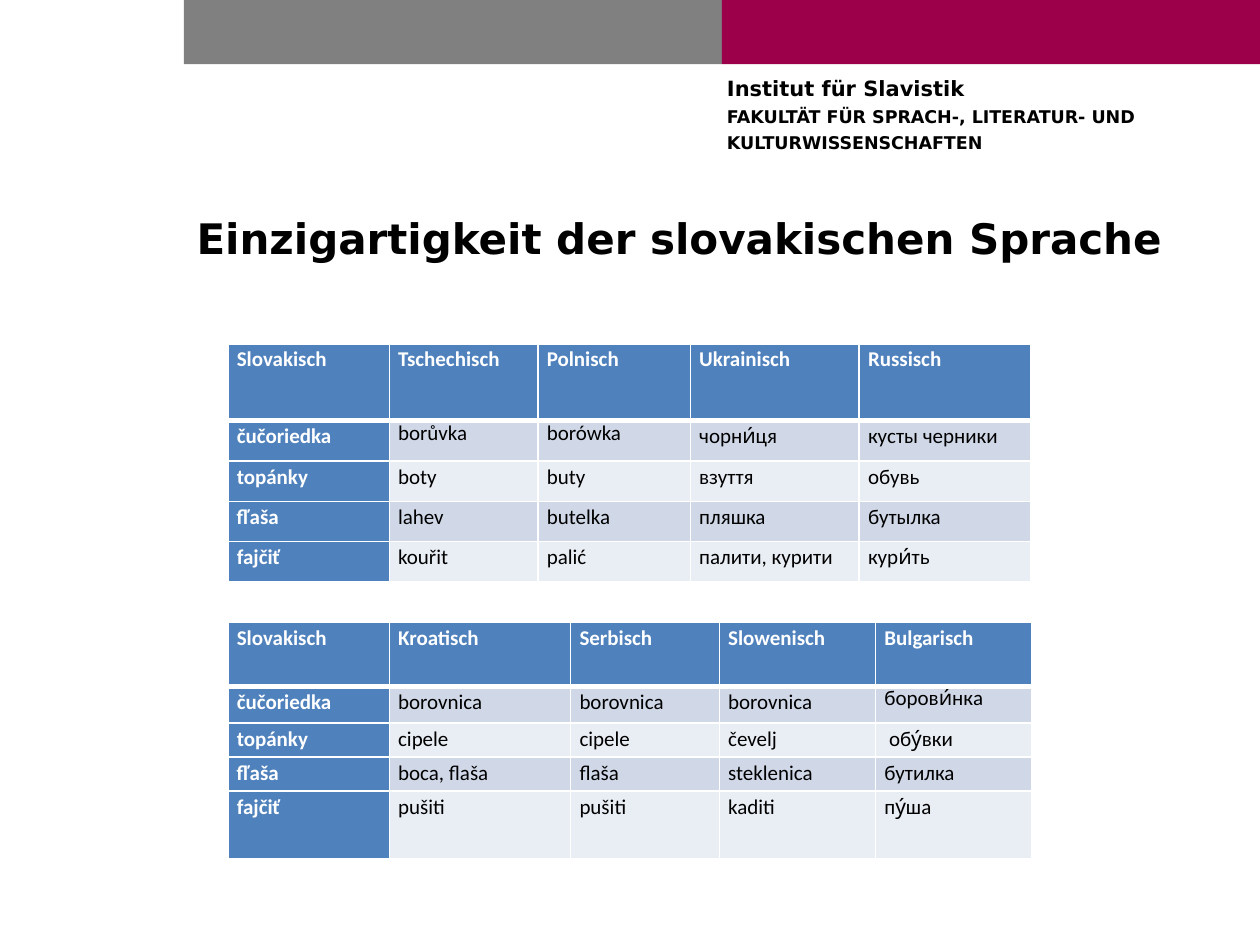
from dataclasses import dataclass

from lxml.etree import SubElement
from pptx import Presentation
from pptx.dml.color import RGBColor
from pptx.enum.shapes import MSO_SHAPE
from pptx.enum.text import MSO_ANCHOR, MSO_AUTO_SIZE, PP_ALIGN
from pptx.oxml.ns import qn
from pptx.slide import Slide
from pptx.util import Inches, Pt


@dataclass(frozen=True)
class Theme:
    grey: str = "808080"
    wine: str = "9C004B"
    blue: str = "4F81BD"
    dark: str = "D0D8E8"
    light: str = "E9EDF4"
    white: str = "FFFFFF"
    black: str = "000000"
    head: str = "DejaVu Sans"
    body: str = "Calibri"
    title: float = 24
    text: float = 12
    small: float = 10


@dataclass(frozen=True)
class Band:
    left: float
    color: str


@dataclass(frozen=True)
class Grid:
    top: float
    cols: list[float]
    rows: list[float]
    words: list[list[str]]
    tight: set[tuple[int, int]]  # row and column of cells with fixed line height


THEME = Theme()
LEFT = 1.81
BANDS = [Band(1.46, THEME.grey), Band(5.73, THEME.wine)]
LINES = [
    ("Institut für Slavistik", THEME.text),
    ("FAKULTÄT FÜR SPRACH-, LITERATUR- UND", THEME.small),
    ("KULTURWISSENSCHAFTEN", THEME.small),
]
GRIDS = [
    Grid(
        2.73, [1.28, 1.18, 1.21, 1.34, 1.36], [0.61, 0.32, 0.32, 0.32, 0.32],
        [
            ["Slovakisch", "Tschechisch", "Polnisch", "Ukrainisch", "Russisch"],
            ["čučoriedka", "borůvka", "borówka", "чорни́ця", "кусты черники"],
            ["topánky", "boty", "buty", "взуття", "обувь"],
            ["fľaša", "lahev", "butelka", "пляшка", "бутылка"],
            ["fajčiť", "kouřit", "palić", "палити, курити", "кури́ть"],
        ],
        {(1, 1), (1, 2)},
    ),
    Grid(
        4.94, [1.28, 1.44, 1.18, 1.24, 1.24], [0.51, 0.29, 0.27, 0.27, 0.54],
        [
            ["Slovakisch", "Kroatisch", "Serbisch", "Slowenisch", "Bulgarisch"],
            ["čučoriedka", "borovnica", "borovnica", "borovnica", "борови́нкa"],
            ["topánky", "cipele", "cipele", "čevelj", " обу́вки"],
            ["fľaša", "boca, flaša", "flaša", "steklenica", "бутилка"],
            ["fajčiť", "pušiti", "pušiti", "kaditi", "пу́ша"],
        ],
        {(1, 4)},
    ),
]


def write(para, text: str, *, size: float = THEME.text, font: str = THEME.body,
          color: str = THEME.black, bold: bool = False, space=None, after: float = 0) -> None:
    para.text = text
    para.alignment = PP_ALIGN.LEFT
    para.line_spacing = space
    para.space_before = Pt(0)
    para.space_after = Pt(after)
    para.font.size = Pt(size)
    para.font.name = font
    para.font.bold = bold
    para.font.color.rgb = RGBColor.from_string(color)


def inset(frame, left: float = 0, top: float = 0, right: float = 0) -> None:
    """Set the margins of a text frame or a cell; the bottom has none."""
    frame.margin_left, frame.margin_top = Inches(left), Inches(top)
    frame.margin_right, frame.margin_bottom = Inches(right), 0


def edge(cell, top: float, base: float) -> None:
    """Draw white cell borders, with top and bottom widths in points."""
    props = cell._tc.get_or_add_tcPr()
    for side, width in (("L", 1), ("R", 1), ("T", top), ("B", base)):
        line = SubElement(props, qn(f"a:ln{side}"), w=str(Pt(width)))
        fill = SubElement(line, qn("a:solidFill"))
        SubElement(fill, qn("a:srgbClr"), val=THEME.white)


def draw_band(slide: Slide, band: Band) -> None:
    shape = slide.shapes.add_shape(
        MSO_SHAPE.RECTANGLE, Inches(band.left), 0, Inches(4.27), Inches(0.51))
    shape.shadow.inherit = False
    shape.fill.solid()
    shape.fill.fore_color.rgb = RGBColor.from_string(band.color)
    shape.line.fill.background()


def draw_head(slide: Slide) -> None:
    box = slide.shapes.add_textbox(Inches(5.77), Inches(0.6), Inches(4.04), Inches(0.94))
    frame = box.text_frame
    frame.word_wrap = True
    inset(frame)
    for i, (text, size) in enumerate(LINES):
        para = frame.add_paragraph() if i else frame.paragraphs[0]
        write(para, text, size=size, font=THEME.head, bold=True, after=3)


def draw_title(slide: Slide) -> None:
    title = slide.shapes.title
    title.left, title.top = Inches(1.46), Inches(1.64)
    title.width, title.height = Inches(7.86), Inches(0.76)
    frame = title.text_frame
    frame.auto_size = MSO_AUTO_SIZE.NONE
    frame.vertical_anchor = MSO_ANCHOR.TOP
    inset(frame, 0.1, 0.05)
    write(frame.paragraphs[0], "Einzigartigkeit der slovakischen Sprache",
          size=THEME.title, font=THEME.head, bold=True)


def draw_grid(slide: Slide, grid: Grid) -> None:
    table = slide.shapes.add_table(
        len(grid.rows), len(grid.cols), Inches(LEFT), Inches(grid.top),
        Inches(sum(grid.cols)), Inches(sum(grid.rows))).table
    for col, width in zip(table.columns, grid.cols):
        col.width = Inches(width)
    for row, height in zip(table.rows, grid.rows):
        row.height = Inches(height)
    for r, words in enumerate(grid.words):
        for c, word in enumerate(words):
            cell = table.cell(r, c)
            label = r == 0 or c == 0
            tight = (r, c) in grid.tight
            inset(cell, 0.07, 0.01, 0.07)
            edge(cell, 3 if r == 1 else 1, 3 if r == 0 else 1)
            shade = THEME.blue if label else THEME.dark if r % 2 else THEME.light
            cell.fill.solid()
            cell.fill.fore_color.rgb = RGBColor.from_string(shade)
            write(cell.text_frame.paragraphs[0], word, bold=label,
                  color=THEME.white if label else THEME.black,
                  space=Pt(13.5) if tight else 1.07, after=8 if tight else 0)


def main() -> None:
    deck = Presentation()
    deck.slide_width, deck.slide_height = Inches(10), Inches(7.5)
    slide = deck.slides.add_slide(deck.slide_layouts[5])
    for band in BANDS:
        draw_band(slide, band)
    draw_head(slide)
    draw_title(slide)
    for grid in GRIDS:
        draw_grid(slide, grid)
    deck.save("out.pptx")


if __name__ == "__main__":
    main()
